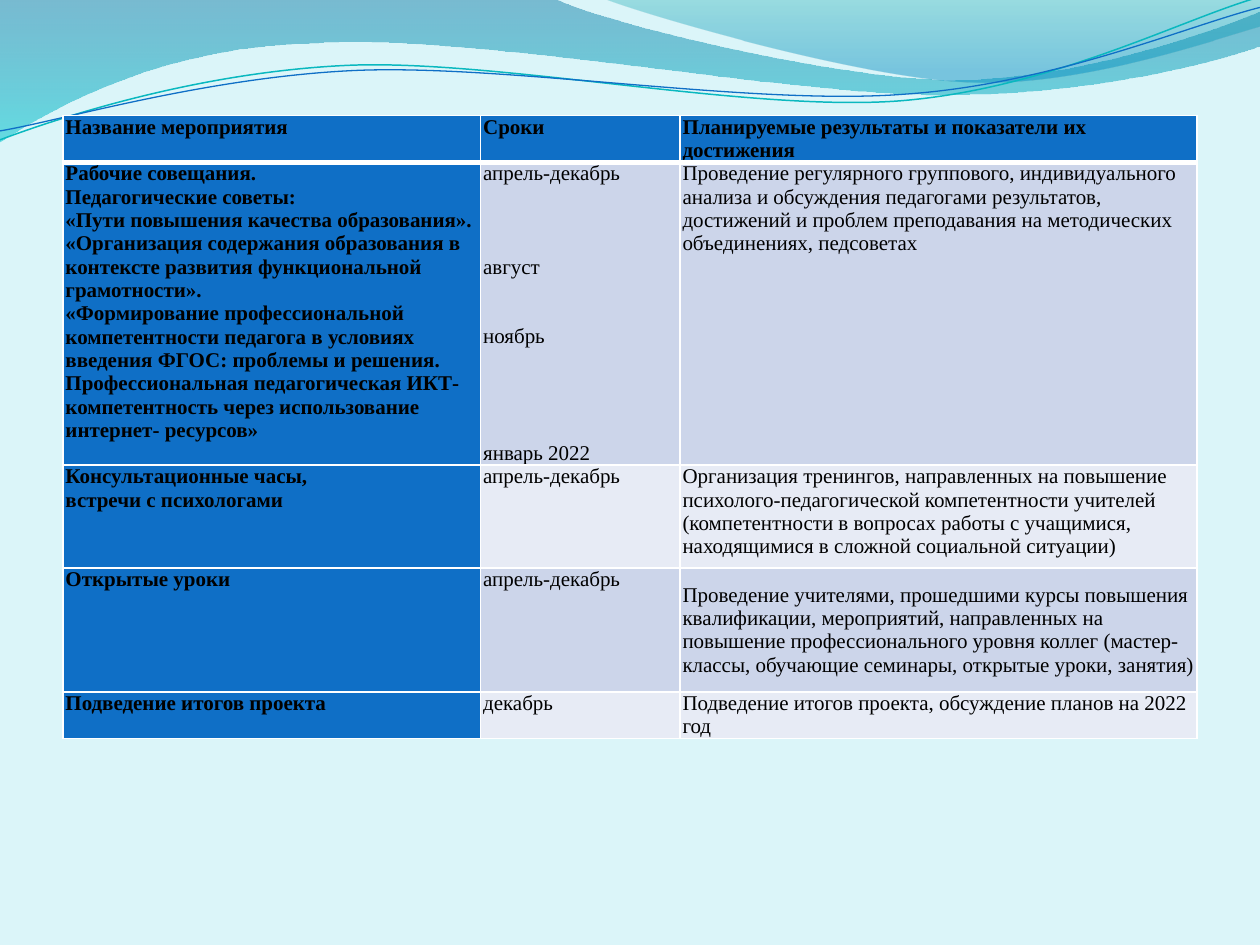
from lxml import etree
from pptx import Presentation
from pptx import util as u
from pptx.dml import color
from pptx.enum import text
from pptx.oxml import ns

BLUE, PALE, LIGHT, WHITE = "0F6FC6", "CCD5EA", "E7EBF5", "FFFFFF"
LINE_PT = 13.3

COLUMNS = (8.42, 4.02, 10.42)
ROWS = (0.64, 5.21, 2.08, 2.49, 0.64)
PLAN = (
    (["Название мероприятия"], ["Сроки"], ["Планируемые результаты и показатели их достижения"]),
    (["Рабочие совещания.", "Педагогические советы:",
      "«Пути повышения качества образования».",
      "«Организация содержания образования в контексте развития функциональной грамотности».",
      "«Формирование профессиональной компетентности педагога в условиях введения ФГОС: "
      "проблемы и решения. Профессиональная педагогическая ИКТ- компетентность через "
      "использование интернет- ресурсов»"],
     ["апрель-декабрь", ("август", 3), ("ноябрь", 2), ("январь 2022", 4)],
     ["Проведение регулярного группового, индивидуального анализа и обсуждения педагогами "
      "результатов, достижений и проблем преподавания на методических объединениях, педсоветах"]),
    (["Консультационные часы,", "встречи с психологами"], ["апрель-декабрь"],
     ["Организация тренингов, направленных на повышение психолого-педагогической компетентности "
      "учителей (компетентности в вопросах работы с учащимися, находящимися в сложной "
      "социальной ситуации)"]),
    (["Открытые уроки"], ["апрель-декабрь"],
     ["Проведение учителями, прошедшими курсы повышения квалификации, мероприятий, направленных "
      "на повышение профессионального уровня коллег (мастер-классы, обучающие семинары, "
      "открытые уроки, занятия)"]),
    (["Подведение итогов проекта"], ["декабрь"],
     ["Подведение итогов проекта, обсуждение планов на 2022 год"]),
)

WIDE_WAVE = (
    ((0, 0),), ((11.18, -0.03),),
    ((12.09, 0.43), (16.87, 1.6), (19.25, 1.6)),
    ((21.67, 1.6), (24.33, 0.66), (25.4, 0.23)),
    ((25.43, 0.91),),
    ((24.97, 1.12), (22.1, 1.93), (18.95, 1.91)),
    ((15.8, 1.91), (9.7, 0.71), (6.53, 0.86)),
    ((3.28, 0.91), (1.17, 2.11), (-0.03, 2.87)),
    ((0, 0),),
)
RIGHT_WAVE = (
    ((12.17, -0.03),),
    ((12.93, 0.28), (17.32, 1.57), (19.53, 1.65)),
    ((21.74, 1.75), (24.41, 0.81), (25.4, 0.53)),
    ((25.4, 0),),
    ((12.17, -0.03),),
)
TEAL_LINE = (
    ((-0.05, 2.22),),
    ((1.19, 1.82), (4.02, 1.04), (7.05, 1.05)),
    ((10.05, 1.07), (15.02, 2.37), (18.08, 2.29)),
    ((21.13, 2.2), (23.87, 0.91), (25.41, 0.55)),
)
BLUE_LINE = (
    ((-0.04, 2.04),),
    ((1.16, 1.9), (4.18, 1.15), (7.2, 1.16)),
    ((10.25, 1.18), (15.13, 2.25), (18.19, 2.16)),
    ((21.21, 2.1), (23.93, 1.06), (25.45, 0.75)),
)


def rgb(value):
    return color.RGBColor.from_string(value)


def add_node(parent, tag, **attributes):
    values = {key: str(value) for key, value in attributes.items()}
    return etree.SubElement(parent, ns.qn(tag), values)


class Deck:
    """Holds the style and the current slide, and draws each kind of element."""

    font = {"name": "Times New Roman", "size": u.Pt(12)}
    cell_format = {"margin_left": u.Cm(0.05), "margin_right": u.Cm(0.05),
                   "margin_top": 0, "margin_bottom": 0}

    def __init__(self, background):
        self.show = Presentation()
        self.show.slide_width, self.show.slide_height = u.Cm(25.4), u.Cm(19.05)
        self.slide = self.show.slides.add_slide(self.show.slide_layouts[6])
        fill = self.slide.background.fill
        fill.solid()
        fill.fore_color.rgb = rgb(background)

    def outline(self, pieces, close):
        points = [(u.Cm(x), u.Cm(y)) for piece in pieces for x, y in piece]
        builder = self.slide.shapes.build_freeform(*points[0])
        builder.add_line_segments(points[1:], close=close)
        shape = builder.convert_to_shape()
        self.bend(shape, pieces)
        shape.shadow.inherit = False
        shape.fill.background()
        return shape

    def bend(self, shape, pieces):
        segments = iter(list(shape._element.iter(ns.qn("a:lnTo"))))
        for piece in pieces[1:]:
            first, *others = [next(segments) for _ in piece]
            if others:
                curve = etree.Element(ns.qn("a:cubicBezTo"))
                first.addprevious(curve)
                for segment in (first, *others):
                    curve.append(segment[0])
                    segment.getparent().remove(segment)

    def wave(self, pieces, stops):
        shape = self.outline(pieces, True)
        shape.line.fill.background()
        shape.fill.gradient()
        shape.fill.gradient_angle = 270
        for stop, (position, shade, alpha) in zip(shape.fill.gradient_stops, stops):
            stop.position = position
            stop.color.rgb = rgb(shade)
            shade_node = stop.color._xFill.find(ns.qn("a:srgbClr"))
            add_node(shade_node, "a:alpha", val=alpha * 1000)

    def curve(self, pieces, shade, width):
        shape = self.outline(pieces, False)
        shape.rotation = 357.3
        shape.line.color.rgb = rgb(shade)
        shape.line.width = u.Pt(width)

    def borders(self, cell, widths):
        properties = cell._tc.get_or_add_tcPr()
        for side, width in widths.items():
            border = add_node(properties, f"a:ln{side}", w=u.Pt(width))
            add_node(add_node(border, "a:solidFill"), "a:srgbClr", val=WHITE)

    def cell(self, cell, paragraphs, shade, bold):
        for key, value in self.cell_format.items():
            setattr(cell, key, value)
        cell.fill.solid()
        cell.fill.fore_color.rgb = rgb(shade)
        frame = cell.text_frame
        for index, entry in enumerate(paragraphs):
            words, free_lines = (entry, 0) if isinstance(entry, str) else entry
            paragraph = frame.add_paragraph() if index else frame.paragraphs[0]
            paragraph.alignment = text.PP_ALIGN.LEFT
            if free_lines:
                paragraph.space_before = u.Pt(free_lines * LINE_PT)
            run = paragraph.add_run()
            run.text = words
            for key, value in {**self.font, "bold": bold}.items():
                setattr(run.font, key, value)
            run.font.color.rgb = rgb("000000")

    def table(self, left, top, columns, rows, content):
        frame = self.slide.shapes.add_table(len(rows), len(columns), u.Cm(left), u.Cm(top),
                                            u.Cm(sum(columns)), u.Cm(sum(rows)))
        table = frame.table
        table.first_col = True
        for column, width in zip(table.columns, columns):
            column.width = u.Cm(width)
        for row, height in zip(table.rows, rows):
            row.height = u.Cm(height)
        for r, entries in enumerate(content):
            for c, paragraphs in enumerate(entries):
                cell = table.cell(r, c)
                heading = r == 0 or c == 0
                self.borders(cell, {"L": 1, "R": 1, "T": 3 if r == 1 else 1,
                                    "B": 3 if r == 0 else 1})
                shade = BLUE if heading else PALE if r % 2 else LIGHT
                self.cell(cell, paragraphs, shade, heading)
        return table


def main():
    deck = Deck("DBF5F9")
    deck.wave(WIDE_WAVE, ((0, "0074A1", 45), (1, "00C6CF", 55)))
    deck.wave(RIGHT_WAVE, ((0, "00A1A9", 30), (0.8, "008BBF", 45)))
    deck.curve(TEAL_LINE, "0AB8BF", 0.85)
    deck.curve(BLUE_LINE, BLUE, 0.75)
    plan = deck.table(1.27, 2.33, COLUMNS, ROWS, PLAN)
    plan.cell(3, 2).vertical_anchor = text.MSO_ANCHOR.MIDDLE
    deck.show.save("out.pptx")


if __name__ == "__main__":
    main()
